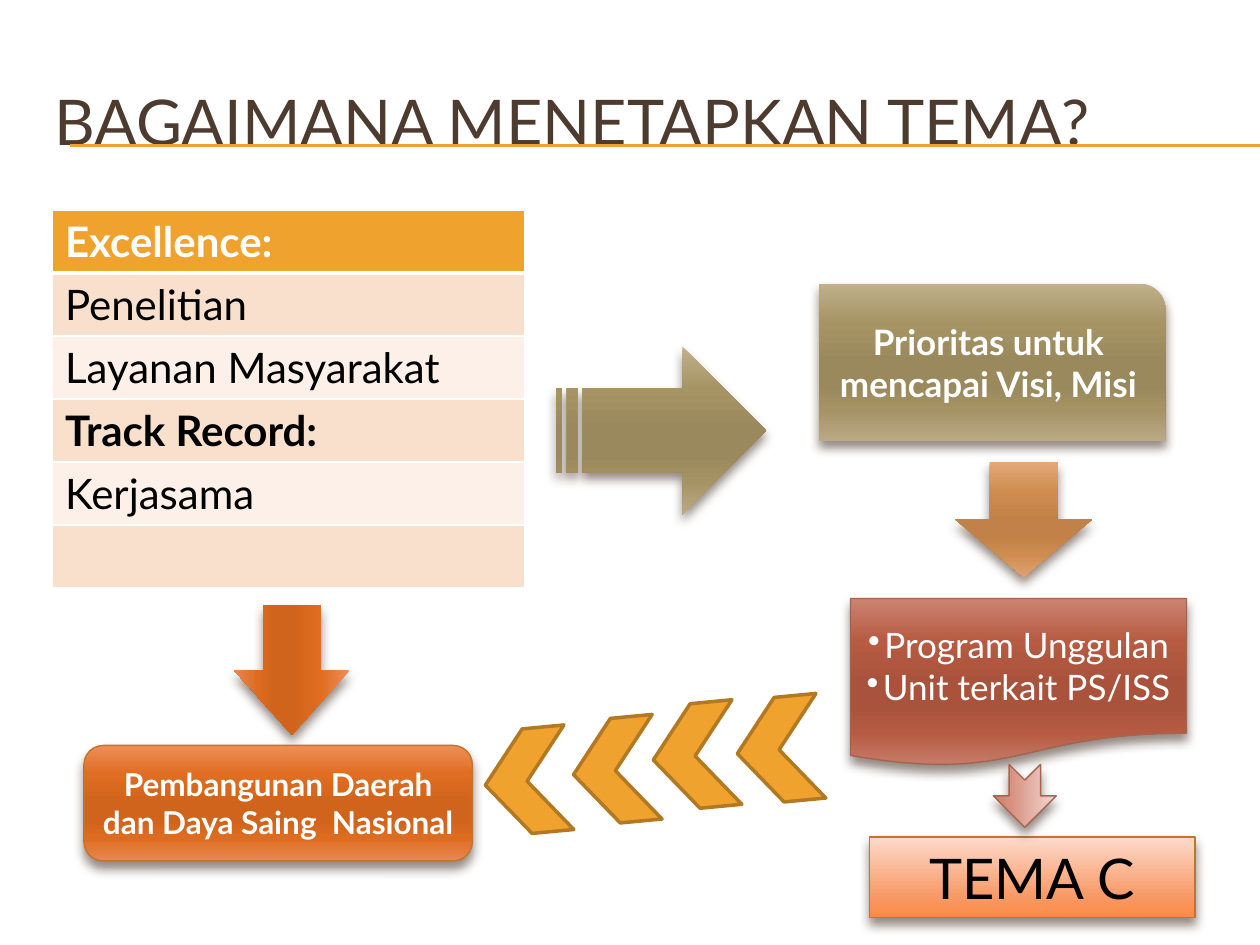
from dataclasses import dataclass
from typing import Optional

import pptx
import pptx.dml.color
import pptx.enum.shapes
import pptx.enum.text
import pptx.oxml
import pptx.oxml.ns
import pptx.util

WIDTH, HEIGHT = 10, 7.5
CELL = WIDTH / 120  # the page is a grid of 120 columns by 90 rows
FONT = "Lato"
WHITE, BLACK, BROWN, GOLD = "FFFFFF", "000000", "4E3B30", "F0A22E"
RUST, BRICK = "C17529", "A5644E"
KIND = pptx.enum.shapes.MSO_SHAPE
ALIGN = pptx.enum.text.PP_ALIGN
ANCHOR = pptx.enum.text.MSO_ANCHOR

GLOSS = (0, 25, 50, 65, 80, 100)
SOFT = (0, 72, 100)
ORANGE = dict(zip(GLOSS, "EE8F5B E06D21 D0641C D0641C DE6C20 E88852".split()))
OLIVE = dict(zip(GLOSS, "C0B18C A69465 9A895C 9A895C A59364 BAAA85".split()))
TAN = dict(zip(GLOSS, "E4A97A D08D50 C18148 C18148 CF8C4F DEA372".split()))
RED = dict(zip(GLOSS, "CD8473 B75B42 AA533C AA533C B65B42 C77D6B".split()))
PEACH = dict(zip(SOFT, "FDDBCC F89B69 FC8A43".split()))
PINK = dict(zip(SOFT, "F1D9D4 D89180 D47A62".split()))


@dataclass
class Figure:
    """A glossy shape; place is left, top, width, height in grid cells."""
    kind: int
    place: tuple
    stops: dict
    line: Optional[str] = None
    turn: float = 0
    adjust: tuple = ()
    lines: tuple = ()
    size: int = 20
    bold: bool = False
    color: str = WHITE
    bullets: bool = False
    anchor: int = ANCHOR.MIDDLE


FIGURES = [
    Figure(KIND.RIGHT_ARROW, (21.6, 58.3, 12.4, 11), ORANGE, turn=90, adjust=(0.5, 0.56)),
    Figure(KIND.ROUNDED_RECTANGLE, (8, 71, 37, 11), ORANGE, RUST, size=18, bold=True,
           lines=("Pembangunan Daerah", "dan Daya Saing  Nasional")),
    Figure(KIND.STRIPED_RIGHT_ARROW, (53, 33, 20, 16), OLIVE),
    Figure(KIND.ROUND_1_RECTANGLE, (78, 27, 33, 15), OLIVE, bold=True,
           lines=("Prioritas untuk mencapai Visi, Misi",)),
    Figure(KIND.DOWN_ARROW, (91, 44, 13, 11), TAN),
    Figure(KIND.FLOWCHART_DOCUMENT, (81, 57, 32, 16), RED, BRICK, bullets=True,
           lines=("Program Unggulan", "Unit terkait PS/ISS")),
    Figure(KIND.RECTANGLE, (82.8, 79.7, 31, 7.7), PEACH, RUST, lines=("TEMA C",),
           size=32, color=BLACK, anchor=ANCHOR.TOP),
    Figure(KIND.NOTCHED_RIGHT_ARROW, (94.6, 72.8, 6, 6), PINK, BRICK, turn=90),
]
CHEVRONS = [(62.2, 67), (54.6, 68.4), (46.2, 69.4), (70.2, 66.4)]
ROWS = [("Excellence:", True), ("Penelitian", False), ("Layanan Masyarakat", False),
        ("Track Record:", True), ("Kerjasama", False), ("", False)]


def rgb(value: str):
    return pptx.dml.color.RGBColor.from_string(value)


def grid(*cells: float) -> list:
    return [pptx.util.Inches(cell * CELL) for cell in cells]


def element(markup: str):
    """Parse one drawing element, given without its namespace declaration."""
    head, rest = markup.split(" ", 1)
    return pptx.oxml.parse_xml(f"{head} {pptx.oxml.ns.nsdecls('a')} {rest}")


def add_span(para, text: str, size: float, color: str, bold: bool = False) -> None:
    span = para.add_run()
    span.text = text
    span.font.name, span.font.size, span.font.bold = FONT, pptx.util.Pt(size), bold
    span.font.color.rgb = rgb(color)


def set_gradient(shape, stops: dict) -> None:
    shape.fill.gradient()
    shape.fill.gradient_angle = 270
    stop_list = shape._element.spPr.find(".//" + pptx.oxml.ns.qn("a:gsLst"))
    for old in list(stop_list):
        stop_list.remove(old)
    for percent, color in stops.items():
        stop_list.append(element(
            f'<a:gs pos="{percent * 1000}"><a:srgbClr val="{color}"/></a:gs>'))


def set_shadow(shape) -> None:
    effects = shape._element.spPr.find(pptx.oxml.ns.qn("a:effectLst"))
    effects.append(element(
        '<a:outerShdw blurRad="76200" dist="50800" dir="5400000" rotWithShape="0">'
        f'<a:srgbClr val="{BROWN}"><a:alpha val="60000"/></a:srgbClr></a:outerShdw>'))


def set_bullet(para) -> None:
    properties = para._p.get_or_add_pPr()
    indent = pptx.util.Inches(0.13)
    properties.set("marL", str(indent))
    properties.set("indent", str(-indent))
    properties.append(element('<a:buChar char="•"/>'))


def add_plain(page, kind: int, place: tuple, line: Optional[str], width: float, turn: float):
    shape = page.shapes.add_shape(kind, *grid(*place))
    shape.rotation = turn
    shape.shadow.inherit = False
    if line:
        shape.line.color.rgb = rgb(line)
        shape.line.width = pptx.util.Pt(width)
    else:
        shape.line.fill.background()
    return shape


def add_figure(page, figure: Figure) -> None:
    shape = add_plain(page, figure.kind, figure.place, figure.line, 0.79, figure.turn)
    for index, value in enumerate(figure.adjust):
        shape.adjustments[index] = value
    set_gradient(shape, figure.stops)
    set_shadow(shape)
    frame = shape.text_frame
    frame.word_wrap = True
    frame.vertical_anchor = figure.anchor
    for index, text in enumerate(figure.lines):
        para = frame.add_paragraph() if index else frame.paragraphs[0]
        para.alignment = ALIGN.CENTER
        if figure.bullets:
            set_bullet(para)
        add_span(para, text, figure.size, figure.color, figure.bold)


def add_chevron(page, left: float, top: float) -> None:
    shape = add_plain(page, KIND.CHEVRON, (left, top, 8, 10), "B27822", 2, 174.6)
    shape.fill.solid()
    shape.fill.fore_color.rgb = rgb(GOLD)


def add_rule(page, top: float) -> None:
    line = page.shapes.add_connector(
        pptx.enum.shapes.MSO_CONNECTOR.STRAIGHT, *grid(6.7, top, 120, top))
    line.line.color.rgb = rgb(GOLD)
    line.line.width = pptx.util.Pt(0.75)
    line._element.spPr.append(pptx.oxml.parse_xml(
        f"<a:effectLst {pptx.oxml.ns.nsdecls('a')}/>"))


def set_borders(cell, bottom: float) -> None:
    properties = cell._tc.get_or_add_tcPr()
    for side, width in (("L", 1), ("R", 1), ("T", 1), ("B", bottom)):
        properties.append(element(
            f'<a:ln{side} w="{pptx.util.Pt(width)}"><a:solidFill>'
            f'<a:srgbClr val="{WHITE}"/></a:solidFill></a:ln{side}>'))


def add_list_table(page) -> None:
    table = page.shapes.add_table(len(ROWS), 1, *grid(5, 20, 45, 36)).table
    for index, (text, bold) in enumerate(ROWS):
        cell = table.cell(index, 0)
        header = index == 0
        set_borders(cell, 3 if header else 1)
        cell.fill.solid()
        band = "F9E0CD" if index % 2 else "FCF0E8"
        cell.fill.fore_color.rgb = rgb(GOLD if header else band)
        if text:
            add_span(cell.text_frame.paragraphs[0], text, 24, WHITE if header else BLACK, bold)


def add_title(page) -> None:
    title = page.shapes.title
    title.left, title.top, title.width, title.height = grid(4, 6, 114, 11)
    title.text_frame.vertical_anchor = ANCHOR.MIDDLE
    para = title.text_frame.paragraphs[0]
    para.alignment = ALIGN.LEFT
    add_span(para, "BAGAIMANA MENETAPKAN TEMA?", 36, BROWN)


def main() -> None:
    deck = pptx.Presentation()
    deck.slide_width, deck.slide_height = pptx.util.Inches(WIDTH), pptx.util.Inches(HEIGHT)
    page = deck.slides.add_slide(deck.slide_layouts[5])
    for top in (13.8, 13.9):
        add_rule(page, top)
    add_title(page)
    add_list_table(page)
    for figure in FIGURES:
        add_figure(page, figure)
    for left, top in CHEVRONS:
        add_chevron(page, left, top)
    deck.save("out.pptx")


if __name__ == "__main__":
    main()
